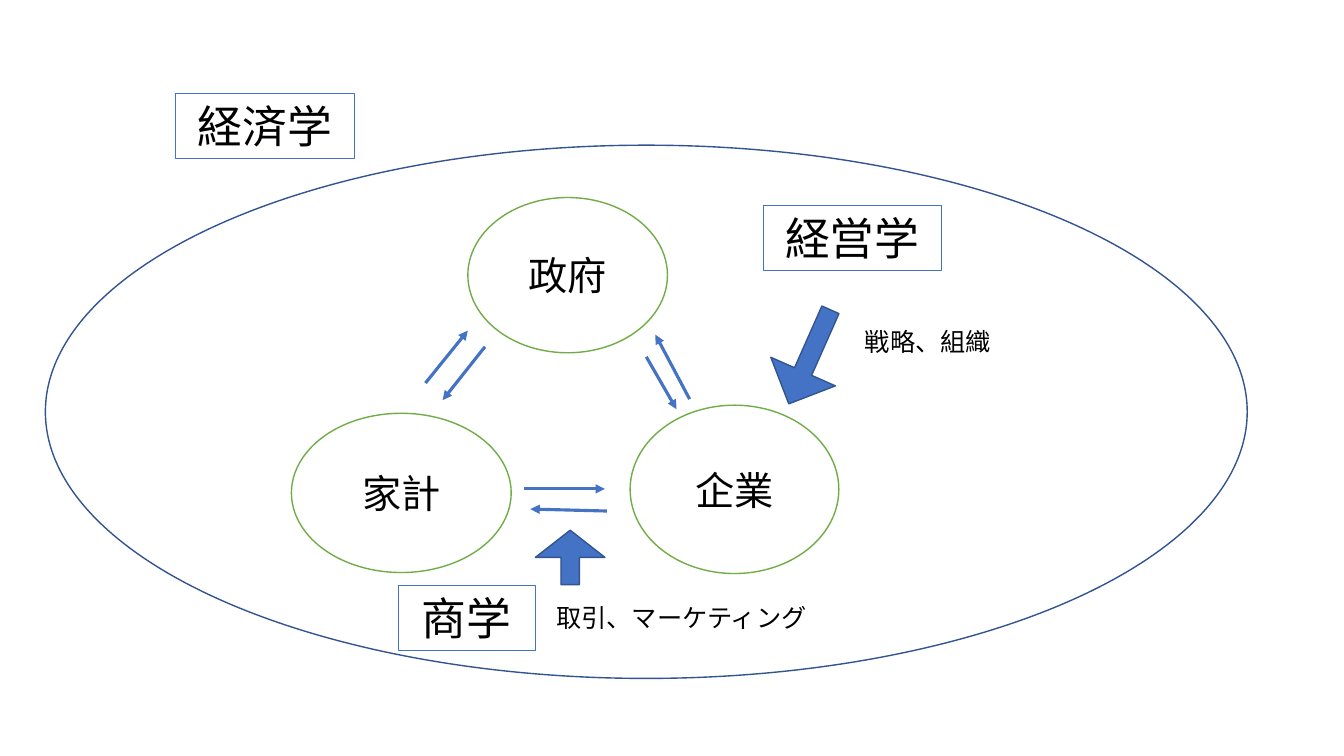
from dataclasses import dataclass

from lxml.etree import SubElement
from pptx import Presentation
from pptx.dml.color import RGBColor
from pptx.enum.shapes import MSO_CONNECTOR as Connector, MSO_SHAPE as Shape
from pptx.enum.text import MSO_ANCHOR as Anchor, MSO_AUTO_SIZE as AutoSize, PP_ALIGN as Align
from pptx.oxml.ns import qn
from pptx.util import Inches, Pt


@dataclass(frozen=True)
class Theme:
    font: str = "Calibri"
    text: RGBColor = RGBColor(0x00, 0x00, 0x00)
    white: RGBColor = RGBColor(0xFF, 0xFF, 0xFF)
    blue: RGBColor = RGBColor(0x44, 0x72, 0xC4)
    dark_blue: RGBColor = RGBColor(0x32, 0x54, 0x91)
    green: RGBColor = RGBColor(0x70, 0xAD, 0x47)
    field_size: int = 32
    actor_size: int = 28
    note_size: int = 18
    box_line: float = 0.75
    outline: float = 1
    flow_line: float = 2.25


THEME = Theme()


def write_text(frame, text, *, size, align=Align.LEFT, anchor=Anchor.TOP):
    frame.word_wrap = True
    frame.vertical_anchor = anchor
    paragraph = frame.paragraphs[0]
    paragraph.alignment = align
    run = paragraph.add_run()
    run.text = text
    run.font.name = THEME.font
    run.font.size = Pt(size)
    run.font.color.rgb = THEME.text


def set_line(line, color, width):
    line.color.rgb = color
    line.width = Pt(width)


def add_figure(slide, kind, bounds, *, line, fill=None):
    shape = slide.shapes.add_shape(kind, *map(Inches, bounds))
    shape.shadow.inherit = False
    if fill is None:
        shape.fill.background()
    else:
        shape.fill.solid()
        shape.fill.fore_color.rgb = fill
    set_line(shape.line, line, THEME.outline)
    return shape


def add_actor(slide, name, bounds):
    shape = add_figure(slide, Shape.OVAL, bounds, line=THEME.green, fill=THEME.white)
    write_text(shape.text_frame, name, size=THEME.actor_size,
               align=Align.CENTER, anchor=Anchor.MIDDLE)


def add_block_arrow(slide, bounds, rotation):
    shape = add_figure(slide, Shape.DOWN_ARROW, bounds, line=THEME.dark_blue, fill=THEME.blue)
    shape.adjustments[0] = 0.265
    shape.adjustments[1] = 0.5
    shape.rotation = rotation


def add_label(slide, text, bounds, **text_format):
    box = slide.shapes.add_textbox(*map(Inches, bounds))
    write_text(box.text_frame, text, **text_format)
    box.text_frame.auto_size = AutoSize.SHAPE_TO_FIT_TEXT
    return box


def add_field(slide, name, bounds):
    box = add_label(slide, name, bounds, size=THEME.field_size, align=Align.CENTER)
    set_line(box.line, THEME.blue, THEME.box_line)


def add_flow(slide, start, end):
    connector = slide.shapes.add_connector(Connector.STRAIGHT, *map(Inches, start + end))
    set_line(connector.line, THEME.blue, THEME.flow_line)
    SubElement(connector.line._get_or_add_ln(), qn("a:tailEnd"), type="triangle")
    SubElement(connector._element.spPr, qn("a:effectLst"))


def main():
    presentation = Presentation()
    presentation.slide_width = Inches(13.33)
    presentation.slide_height = Inches(7.5)
    slide = presentation.slides.add_slide(presentation.slide_layouts[6])

    add_figure(slide, Shape.OVAL, (0.45, 1.44, 11.92, 5.29), line=THEME.dark_blue)

    for name, bounds in (
        ("政府", (4.64, 1.96, 1.98, 1.54)),
        ("企業", (6.25, 4.02, 2.07, 1.67)),
        ("家計", (2.89, 4.1, 2.18, 1.58)),
    ):
        add_actor(slide, name, bounds)

    add_block_arrow(slide, (7.68, 3.03, 0.7, 1.02), 23.9)
    add_block_arrow(slide, (5.31, 5.26, 0.69, 0.54), 180)

    for name, bounds in (
        ("経営学", (7.57, 2.04, 1.77, 0.64)),
        ("商学", (3.95, 5.81, 1.36, 0.64)),
        ("経済学", (1.74, 0.93, 1.78, 0.64)),
    ):
        add_field(slide, name, bounds)

    add_label(slide, "戦略、組織", (8.48, 3.19, 1.77, 0.4), size=THEME.note_size)
    add_label(slide, "取引、マーケティング", (5.42, 5.93, 2.83, 0.4), size=THEME.note_size)

    for start, end in (
        ((4.22, 3.8), (4.64, 3.28)),
        ((4.81, 3.44), (4.39, 3.97)),
        ((6.41, 3.54), (6.71, 4.06)),
        ((6.84, 3.96), (6.5, 3.32)),
        ((5.2, 4.85), (6, 4.85)),
        ((6.02, 5.07), (5.26, 5.05)),
    ):
        add_flow(slide, start, end)

    presentation.save("out.pptx")


if __name__ == "__main__":
    main()
